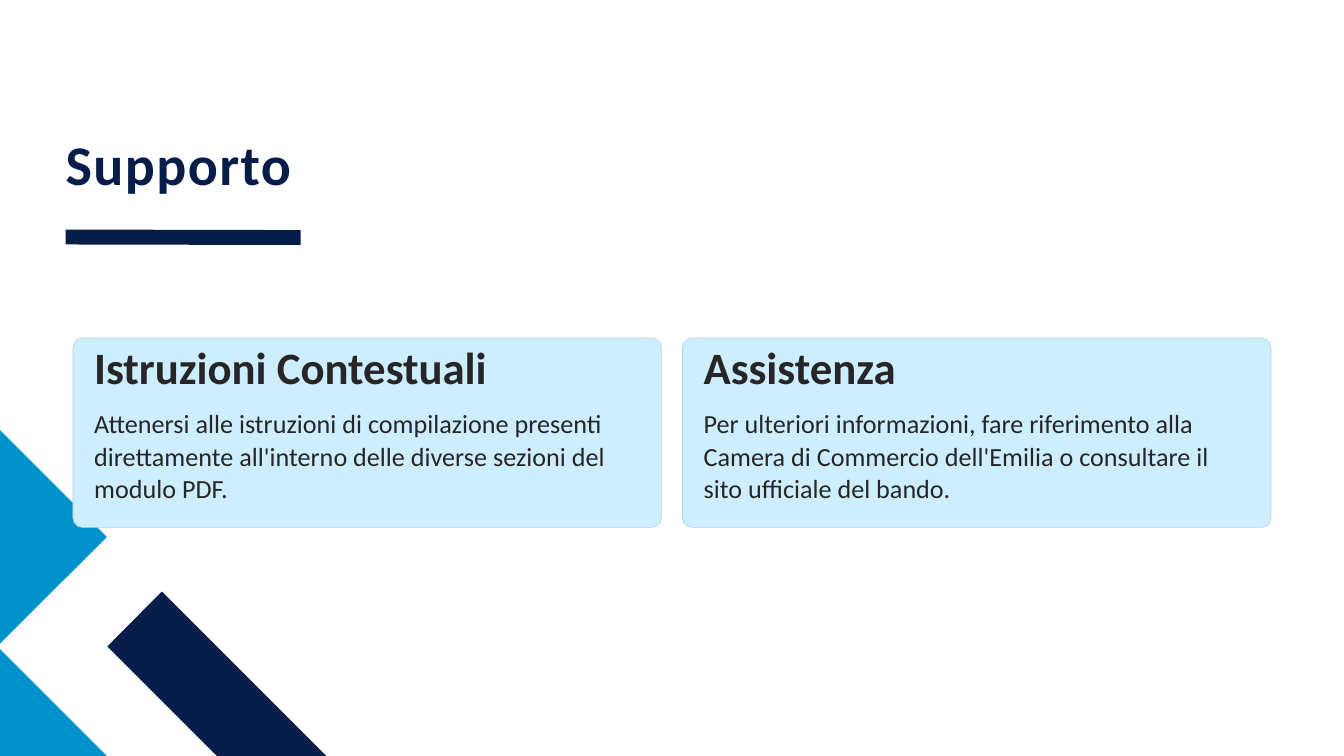
import dataclasses

import lxml.etree
import pptx
import pptx.dml.color
import pptx.enum.shapes
import pptx.enum.text
import pptx.oxml.ns
import pptx.util
from pptx.util import Cm


@dataclasses.dataclass(frozen=True)
class Theme:
    navy: str = "071D49"
    blue: str = "0092CC"
    card: str = "CCEEFF"
    card_border: str = "B2D4E5"
    ink: str = "272525"
    font: str = "Calibri"
    title_size: float = 30
    heading_size: float = 24
    body_size: float = 14


theme = Theme()
color = pptx.dml.color.RGBColor.from_string
anchors = pptx.enum.text.MSO_ANCHOR


def add_text(slide, text, left, top, width, height, *, size, text_color,
             bold=False, anchor=anchors.TOP, line_spacing=None,
             letter_spacing=None):
    """Place one paragraph in a box without margins; letter_spacing is in points."""
    box = slide.shapes.add_textbox(Cm(left), Cm(top), Cm(width), Cm(height))
    frame = box.text_frame
    frame.margin_left = frame.margin_right = 0
    frame.margin_top = frame.margin_bottom = 0
    frame.word_wrap = True
    frame.vertical_anchor = anchor
    paragraph = frame.paragraphs[0]
    paragraph.line_spacing = line_spacing
    run = paragraph.add_run()
    run.text = text
    run.font.name = theme.font
    run.font.size = pptx.util.Pt(size)
    run.font.bold = bold
    run.font.color.rgb = color(text_color)
    if letter_spacing is not None:
        run.font._element.set("spc", str(round(letter_spacing * 100)))


presentation = pptx.Presentation()
presentation.slide_width = Cm(25.4)
presentation.slide_height = Cm(14.29)
slide = presentation.slides.add_slide(presentation.slide_layouts[6])

# Title and its rule
title_rule = slide.shapes.add_connector(
    pptx.enum.shapes.MSO_CONNECTOR.STRAIGHT, Cm(1.24), Cm(4.48), Cm(5.68), Cm(4.49))
title_rule.line.color.rgb = color(theme.navy)
title_rule.line.width = pptx.util.Pt(8)
lxml.etree.SubElement(title_rule._element.spPr, pptx.oxml.ns.qn("a:effectLst"))

add_text(slide, "Supporto", 1.24, 0.2, 22.66, 3.51, size=theme.title_size,
         text_color=theme.navy, bold=True, anchor=anchors.BOTTOM,
         line_spacing=0.8, letter_spacing=0.8)

# Corner decoration
corner_pieces = [
    (theme.navy, [(6.17, 14.29), (4.1, 14.29), (2.03, 12.22), (3.06, 11.18)]),
    (theme.blue, [(2.02, 14.29), (0, 14.29), (0, 12.27)]),
    (theme.blue, [(0, 8.13), (2.02, 10.15), (0, 12.17)]),
]
for fill, points in corner_pieces:
    start, *others = [(Cm(x), Cm(y)) for x, y in points]
    builder = slide.shapes.build_freeform(*start)
    builder.add_line_segments(others, close=True)
    piece = builder.convert_to_shape()
    piece.shadow.inherit = False
    piece.fill.solid()
    piece.fill.fore_color.rgb = color(fill)
    piece.line.fill.background()

# Cards
card_left, card_top, card_width, card_height = 1.38, 6.39, 11.12, 3.58
card_gap, padding = 0.4, 0.4
text_width = card_width - 2 * padding
cards = [
    ("Istruzioni Contestuali",
     "Attenersi alle istruzioni di compilazione presenti direttamente "
     "all'interno delle diverse sezioni del modulo PDF."),
    ("Assistenza",
     "Per ulteriori informazioni, fare riferimento alla Camera di Commercio "
     "dell'Emilia o consultare il sito ufficiale del bando."),
]
for index, (heading, body) in enumerate(cards):
    left = card_left + index * (card_width + card_gap)
    card = slide.shapes.add_shape(
        pptx.enum.shapes.MSO_SHAPE.ROUNDED_RECTANGLE,
        Cm(left), Cm(card_top), Cm(card_width), Cm(card_height))
    card.adjustments[0] = 0.05
    card.shadow.inherit = False
    card.fill.solid()
    card.fill.fore_color.rgb = color(theme.card)
    card.line.color.rgb = color(theme.card_border)
    card.line.width = pptx.util.Pt(0.38)

    text_left = left + padding
    add_text(slide, heading, text_left, card_top + 0.42, text_width, 0.64,
             size=theme.heading_size, text_color=theme.ink, bold=True,
             line_spacing=pptx.util.Pt(18))
    add_text(slide, body, text_left, card_top + 1.29, text_width, 1.88,
             size=theme.body_size, text_color=theme.ink,
             line_spacing=pptx.util.Pt(17.5))

presentation.save("out.pptx")
